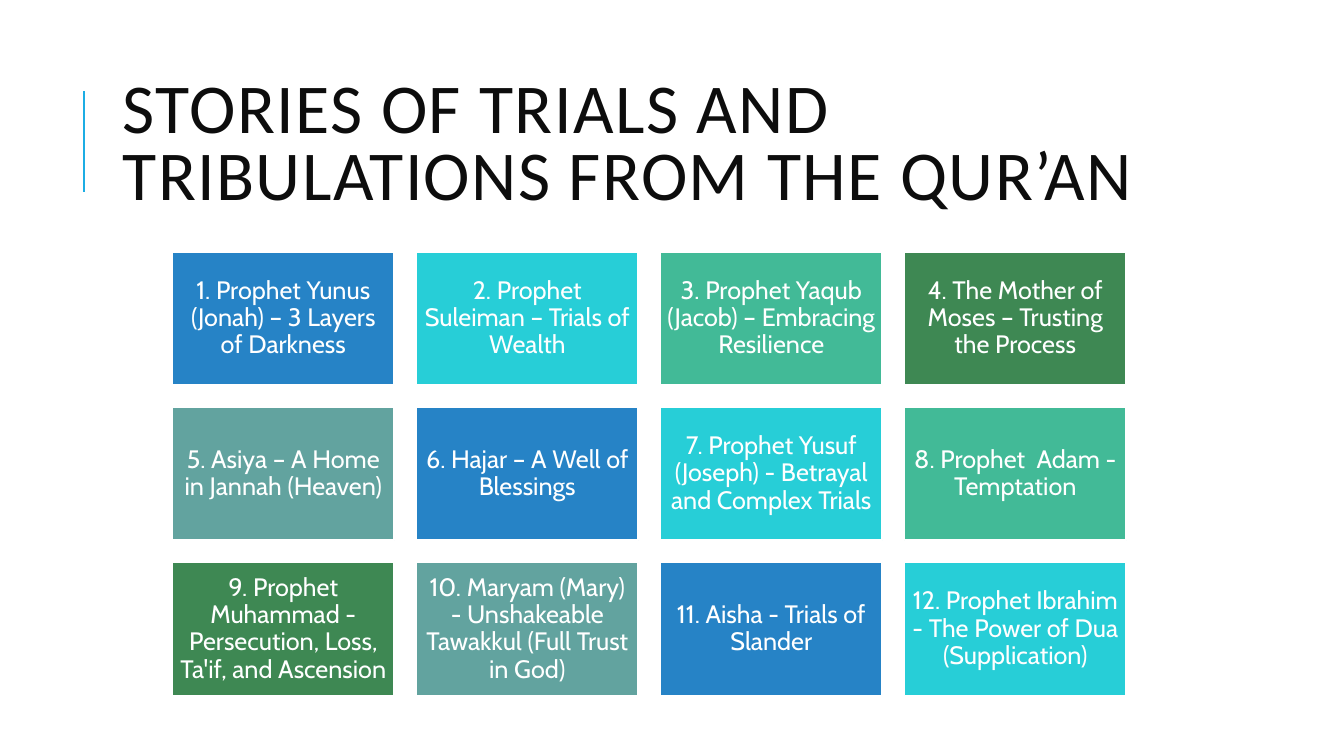
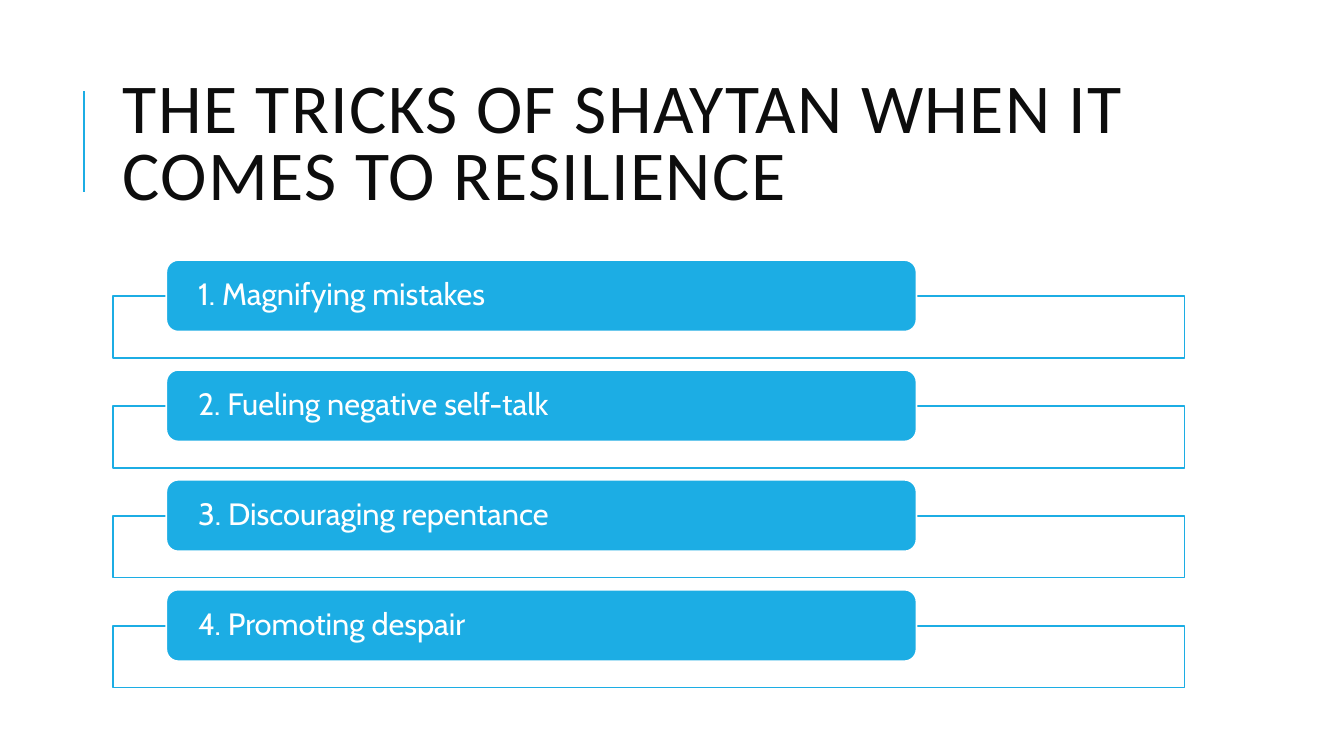
"""Build two slides on trials in the Qur’an and the tricks that wear down resilience."""
import pptx
import pptx.dml.color
import pptx.enum.shapes
import pptx.enum.text
import pptx.oxml
import pptx.oxml.ns
import pptx.util

Inches = pptx.util.Inches
Pt = pptx.util.Pt
RGBColor = pptx.dml.color.RGBColor
MSO_SHAPE = pptx.enum.shapes.MSO_SHAPE
PP_ALIGN = pptx.enum.text.PP_ALIGN

WHITE = RGBColor(0xFF, 0xFF, 0xFF)
INK = RGBColor(0x0D, 0x0D, 0x0D)
SKY = RGBColor(0x1C, 0xAD, 0xE4)
BLUE = RGBColor(0x26, 0x83, 0xC6)
TURQUOISE = RGBColor(0x27, 0xCE, 0xD7)
MINT = RGBColor(0x42, 0xBA, 0x97)
GREEN = RGBColor(0x3E, 0x88, 0x53)
SAGE = RGBColor(0x62, 0xA3, 0x9F)
CARD_COLORS = [BLUE, TURQUOISE, MINT, GREEN, SAGE]

STORIES = [
    "1. Prophet Yunus (Jonah) – 3 Layers of Darkness",
    "2. Prophet Suleiman – Trials of Wealth",
    "3. Prophet Yaqub (Jacob) – Embracing Resilience",
    "4. The Mother of Moses – Trusting the Process",
    "5. Asiya – A Home in Jannah (Heaven)",
    "6. Hajar – A Well of Blessings",
    "7. Prophet Yusuf (Joseph) - Betrayal and Complex Trials",
    "8. Prophet  Adam - Temptation",
    "9. Prophet Muhammad - Persecution, Loss, Ta'if, and Ascension",
    "10. Maryam (Mary) - Unshakeable Tawakkul (Full Trust in God)",
    "11. Aisha - Trials of Slander",
    "12. Prophet Ibrahim - The Power of Dua (Supplication)",
]
TRICKS = [
    "1. Magnifying mistakes",
    "2. Fueling negative self-talk",
    "3. Discouraging repentance",
    "4. Promoting despair",
]

deck = pptx.Presentation()
deck.slide_width = Inches(13.33)
deck.slide_height = Inches(7.5)


def add_titled_slide(heading):
    slide = deck.slides.add_slide(deck.slide_layouts[6])
    accent = slide.shapes.add_connector(
        pptx.enum.shapes.MSO_CONNECTOR.STRAIGHT,
        Inches(0.83), Inches(1.9), Inches(0.83), Inches(0.9))
    accent.line.color.rgb = SKY
    accent.line.width = Pt(1.5)
    accent._element.spPr.append(pptx.oxml.parse_xml(
        f"<a:effectLst {pptx.oxml.ns.nsdecls('a')}/>"))

    title = slide.shapes.add_textbox(
        Inches(1.12), Inches(0.64), Inches(10.63), Inches(1.64))
    frame = title.text_frame
    frame.word_wrap = True
    frame.vertical_anchor = pptx.enum.text.MSO_ANCHOR.MIDDLE
    frame.text = heading
    frame.paragraphs[0].line_spacing = 0.8
    font = frame.paragraphs[0].runs[0].font
    font.name = "Calibri"
    font.size = Pt(50)
    font.color.rgb = INK
    font._element.set("spc", "100")
    return slide


def add_block(slide, kind, left, top, width, height, fill, outline=WHITE,
              text="", size=18, align=PP_ALIGN.CENTER, insets=(0.07, 0.07)):
    block = slide.shapes.add_shape(
        kind, Inches(left), Inches(top), Inches(width), Inches(height))
    block.shadow.inherit = False
    block.fill.solid()
    block.fill.fore_color.rgb = fill
    block.line.color.rgb = outline
    block.line.width = Pt(1.25)
    if text:
        frame = block.text_frame
        frame.word_wrap = True
        frame.vertical_anchor = pptx.enum.text.MSO_ANCHOR.MIDDLE
        frame.margin_left = frame.margin_right = Inches(insets[0])
        frame.margin_top = frame.margin_bottom = Inches(insets[1])
        frame.text = text
        frame.paragraphs[0].alignment = align
        frame.paragraphs[0].line_spacing = 0.9
        font = frame.paragraphs[0].runs[0].font
        font.name = "Cabin"
        font.size = Pt(size)
        font.color.rgb = WHITE


stories_slide = add_titled_slide("STORIES OF TRIALS AND TRIBULATIONS FROM THE QUR’AN")
card_width, card_height, card_gap = 2.2, 1.32, 0.22
for index, story in enumerate(STORIES):
    row, column = divmod(index, 4)
    add_block(stories_slide, MSO_SHAPE.RECTANGLE,
              1.71 + column * (card_width + card_gap),
              2.5 + row * (card_height + card_gap),
              card_width, card_height,
              CARD_COLORS[index % len(CARD_COLORS)], text=story)

tricks_slide = add_titled_slide("THE TRICKS OF SHAYTAN WHEN IT COMES TO RESILIENCE")
for index, trick in enumerate(TRICKS):
    top = 2.58 + index * 1.09
    add_block(tricks_slide, MSO_SHAPE.RECTANGLE, 1.12, top + 0.36, 10.63, 0.61,
              WHITE, outline=SKY)
    add_block(tricks_slide, MSO_SHAPE.ROUNDED_RECTANGLE, 1.65, top, 7.44, 0.71,
              SKY, text=trick, size=22, align=PP_ALIGN.LEFT, insets=(0.28, 0))

deck.save("out.pptx")
